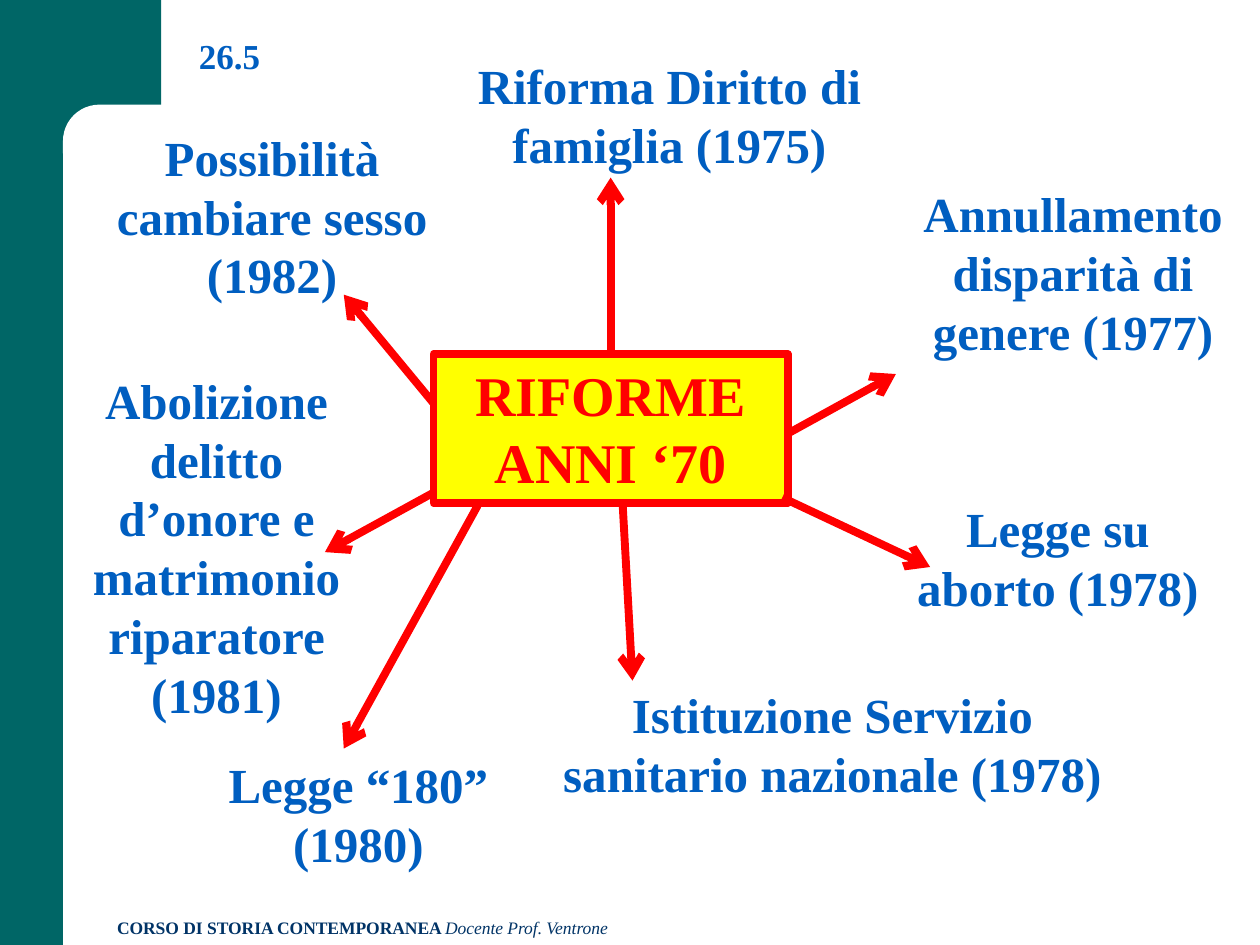
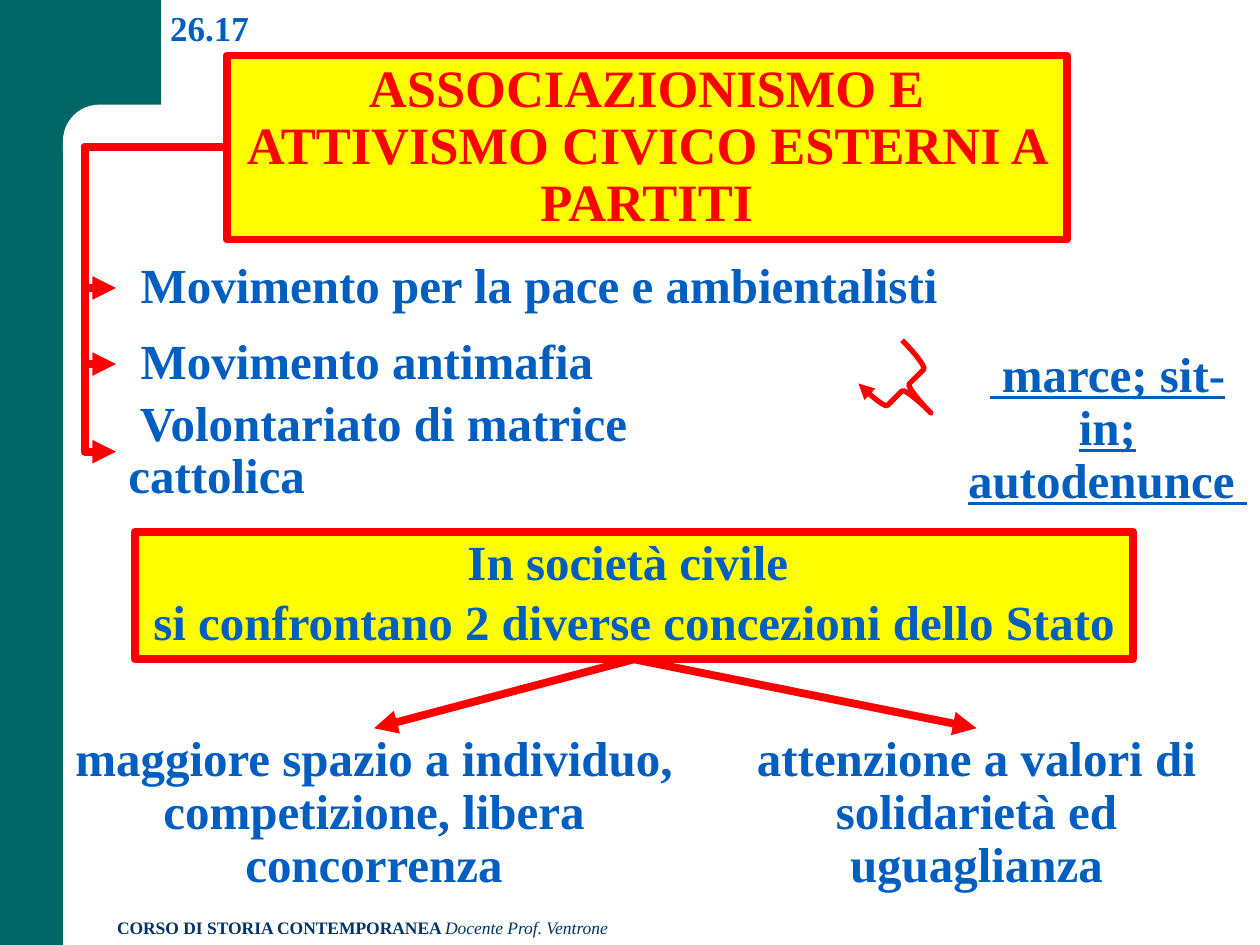
from lxml import etree
from pptx import Presentation
from pptx.dml.color import RGBColor
from pptx.enum.shapes import MSO_CONNECTOR, MSO_SHAPE
from pptx.enum.text import MSO_ANCHOR, MSO_AUTO_SIZE, PP_ALIGN
from pptx.oxml.ns import qn
from pptx.util import Cm, Pt

RECTANGLE, ROUNDED, BRACE = MSO_SHAPE.RECTANGLE, MSO_SHAPE.ROUNDED_RECTANGLE, MSO_SHAPE.RIGHT_BRACE
STRAIGHT, ELBOW = MSO_CONNECTOR.STRAIGHT, MSO_CONNECTOR.ELBOW
LEFT, CENTER = PP_ALIGN.LEFT, PP_ALIGN.CENTER
TOP, MIDDLE = MSO_ANCHOR.TOP, MSO_ANCHOR.MIDDLE
GROW = MSO_AUTO_SIZE.SHAPE_TO_FIT_TEXT
TOP_SIDE, BOTTOM_SIDE = 0, 2

COLORS = {"band": "006666", "paper": "FFFFFF", "footer": "003366",
          "blue": "005EC0", "red": "FF0000", "yellow": "FFFF00"}
FONT = "Times New Roman"
TIGHT = {"line_spacing": 0.9}


def color(name):
    return RGBColor.from_string(COLORS[name])


class Style:
    """Holds the deck, the current slide and the look of every element."""

    def __init__(self, deck):
        self.deck = deck
        self.slide = None

    def new_slide(self, number, area):
        self.slide = self.deck.slides.add_slide(self.deck.slide_layouts[6])
        self.shape(RECTANGLE, (0, 0, 1.27, 19.05), "band")
        self.shape(RECTANGLE, (0, 0, 3.25, 2.97), "band")
        self.shape(ROUNDED, (1.27, 2.11, 15.04, 1.7), "paper").adjustments[0] = 0.432
        footer = self.label((2.11, 18.36, 15.67, 0.69), ["CORSO DI STORIA CONTEMPORANEA "],
                            size=10, ink="footer", align=LEFT)
        self.span(footer.text_frame.paragraphs[0], "Docente Prof. Ventrone",
                  size=10, ink="footer", bold=False, italic=True)
        self.label(area, [number], size=20, align=LEFT)

    def shape(self, kind, area, fill, line=None, width=4.5):
        shape = self.slide.shapes.add_shape(kind, *map(Cm, area))
        shape.shadow.inherit = False
        shape.fill.solid()
        shape.fill.fore_color.rgb = color(fill)
        if line:
            shape.line.color.rgb = color(line)
            shape.line.width = Pt(width)
        else:
            shape.line.fill.background()
        return shape

    def span(self, para, text, size, ink, **font):
        span = para.add_run()
        span.text = text
        for name, value in {"name": FONT, "size": Pt(size), "bold": True, **font}.items():
            setattr(span.font, name, value)
        span.font.color.rgb = color(ink)

    def fill_text(self, box, lines, size=28, ink="blue", align=CENTER, anchor=TOP,
                  wrap=True, spacing=None, **font):
        frame = box.text_frame
        for name, value in {"word_wrap": wrap, "auto_size": GROW,
                            "vertical_anchor": anchor}.items():
            setattr(frame, name, value)
        for index, line in enumerate(lines):
            para = frame.add_paragraph() if index else frame.paragraphs[0]
            for name, value in {"alignment": align, **(spacing or {})}.items():
                setattr(para, name, value)
            if index:
                para.space_before = Pt(4.4)
            self.span(para, line, size, ink, **font)
        return box

    def label(self, area, lines, **look):
        return self.fill_text(self.slide.shapes.add_textbox(*map(Cm, area)), lines, **look)

    def panel(self, area, lines, **look):
        return self.fill_text(self.shape(RECTANGLE, area, "yellow", "red"), lines, **look)

    def arrowhead(self, shape, head):
        line = shape.line._get_or_add_ln()
        etree.SubElement(line, qn("a:tailEnd"), type=head)

    def arrow(self, start, end, head, kind=STRAIGHT):
        arrow = self.slide.shapes.add_connector(kind, *map(Cm, (*start, *end)))
        arrow.line.color.rgb = color("red")
        arrow.line.width = Pt(4.5)
        self.arrowhead(arrow, head)
        etree.SubElement(arrow._element.spPr, qn("a:effectLst"))
        return arrow

    def elbow(self, start, end, bend):
        """Draw a bent arrow that turns at the given share of its width."""
        arrow = self.arrow(start, end, "triangle", ELBOW)
        guides = arrow._element.spPr.find(qn("a:prstGeom")).get_or_add_avLst()
        etree.SubElement(guides, qn("a:gd"), name="adj1", fmla=f"val {round(bend * 100000)}")


def build_reforms(style):
    style.new_slide("26.5", (3.76, 0.58, 2.18, 1.12))
    hub = style.panel((8.74, 7.14, 7.14, 3), ["RIFORME ANNI ‘70"], size=32, ink="red")
    reforms = [
        ((8.53, 0.99, 9.93, 2.64), "Riforma Diritto di famiglia (1975)"),
        ((17.86, 3.58, 7.54, 3.84), "Annullamento disparità di genere (1977)"),
        ((17.86, 9.93, 6.93, 2.64), "Legge su aborto (1978)"),
        ((10.72, 13.67, 12.12, 2.64), "Istituzione Servizio sanitario nazionale (1978)"),
        ((3.76, 15.09, 6.93, 2.64), "Legge “180” (1980)"),
        ((1.19, 7.34, 6.35, 7.44), "Abolizione delitto d’onore e matrimonio riparatore (1981)"),
        ((1.32, 2.44, 8.33, 3.84), "Possibilità cambiare sesso (1982)"),
    ]
    for area, text in reforms:
        style.label(area, [text])
    style.arrow((12.31, 7.14), (12.31, 3.58), "arrow").begin_connect(hub, TOP_SIDE)
    rays = [
        ((15.88, 8.74), (18.06, 7.54)),
        ((15.77, 10.03), (18.75, 11.43)),
        ((12.55, 10.13), (12.75, 13.72)),
        ((8.74, 8.13), (6.93, 5.94)),
        ((9.63, 10.19), (6.93, 15.09)),
        ((8.74, 9.93), (6.55, 11.13)),
    ]
    for start, end in rays:
        style.arrow(start, end, "arrow")


def build_activism(style):
    style.new_slide("26.17", (3.18, 0, 2.77, 1.12))
    style.panel((4.57, 1.12, 16.94, 3.71),
                ["ASSOCIAZIONISMO E ATTIVISMO CIVICO ESTERNI A PARTITI"],
                size=30, ink="red", anchor=MIDDLE, spacing=TIGHT)
    movements = [
        (5.13, 17.98, 1.35, " Movimento per la pace e ambientalisti"),
        (6.68, 9.96, 1.32, " Movimento antimafia"),
        (7.9, 13.77, 2.41, " Volontariato di matrice cattolica"),
    ]
    left = 2.34
    for top, width, height, text in movements:
        style.label((left, top, width, height), [text], align=LEFT, anchor=MIDDLE, spacing=TIGHT)
        style.elbow((4.57, 2.97), (left, top + height / 2), 1.284)
    style.label((19.25, 6.93, 6.15, 3.48), [" marce; sit-in; autodenunce "],
                spacing=TIGHT, underline=True)

    society = style.panel((2.72, 10.72, 20.12, 2.57),
                          ["In società civile ",
                           "si confrontano 2 diverse concezioni dello Stato"],
                          wrap=False, spacing=TIGHT)
    views = [
        (1.19, 12.7, "maggiore spazio a individuo, competizione, libera concorrenza"),
        (13.97, 11.43, "attenzione a valori di solidarietà ed uguaglianza"),
    ]
    for left, width, text in views:
        view = style.label((left, 14.68, width, 3.48), [text], spacing=TIGHT)
        arrow = style.arrow((12.78, 13.29), (left + width / 2, 14.68), "triangle")
        arrow.begin_connect(society, BOTTOM_SIDE)
        arrow.end_connect(view, TOP_SIDE)

    brace = style.shape(BRACE, (17.53, 7.19, 1.45, 1.24), "paper", "red", 3)
    brace.rotation = 45.3
    brace.adjustments[0] = 0.083
    style.arrowhead(brace, "triangle")


def main():
    deck = Presentation()
    deck.slide_width, deck.slide_height = Cm(25.4), Cm(19.05)
    style = Style(deck)
    build_reforms(style)
    build_activism(style)
    deck.save("out.pptx")


if __name__ == "__main__":
    main()
